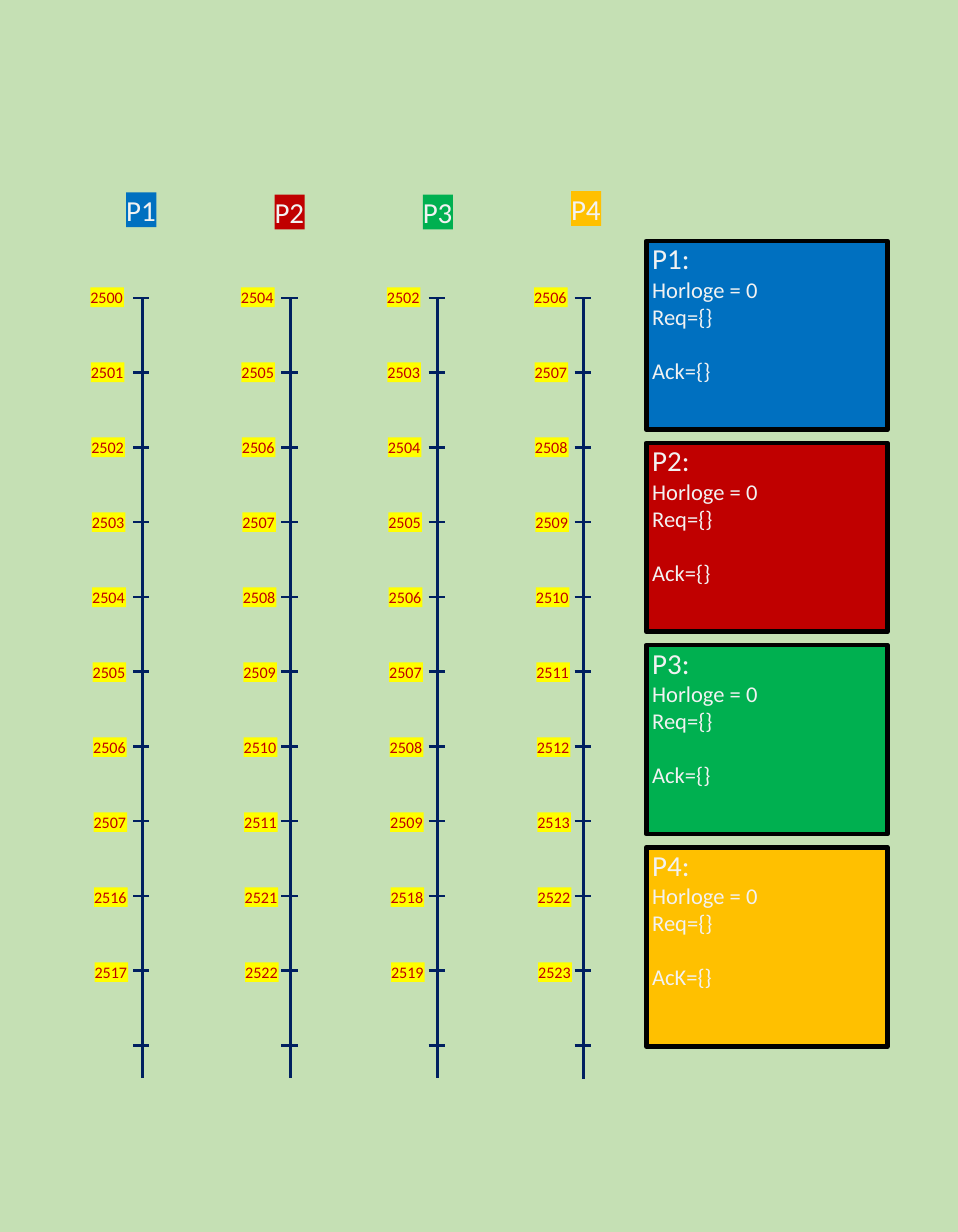
from dataclasses import dataclass

from lxml import etree
from pptx import Presentation
from pptx.dml.color import RGBColor as RGB
from pptx.enum.shapes import MSO_CONNECTOR as CONN, MSO_SHAPE as SHAPE
from pptx.enum.text import MSO_ANCHOR as ANCHOR, MSO_AUTO_SIZE as AUTO, PP_ALIGN as ALIGN
from pptx.oxml.ns import qn
from pptx.util import Inches, Pt


@dataclass(frozen=True)
class Theme:
    font: str = "Calibri"
    background: str = "C5E0B4"
    axis: str = "002060"
    clock_fill: str = "FFFF00"
    clock_text: str = "C00000"
    light_text: str = "F2F2F2"
    border: str = "000000"
    name_size: int = 18
    state_size: int = 14
    clock_size: int = 10


@dataclass(frozen=True)
class Process:
    name: str
    color: str
    axis_x: float
    axis_top: float
    clock_x: float
    tag_top: float
    first: int    # clock value at the first tick
    resumed: int  # clock value after the jump
    ack: str = "Ack"


THEME = Theme()
PROCESSES = [
    Process("P1", "0070C0", 1.23, 2.57, 0.78, 1.66, 2500, 2516),
    Process("P2", "C00000", 2.51, 2.57, 2.08, 1.68, 2504, 2521),
    Process("P3", "00B050", 3.78, 2.57, 3.34, 1.68, 2502, 2518),
    Process("P4", "FFC000", 5.04, 2.58, 4.61, 1.65, 2506, 2522, "AcK"),
]
AXIS_LENGTH = 6.73
TICKS, TICK_TOP, TICK_STEP, TICK_WIDTH = 11, 2.57, 0.645, 0.14
CLOCK_TOP, CLOCK_STEP, CLOCK_DRIFT = 2.48, 0.647, 0.004
TAG_LEFT, TAG_STEP = 1.09, 1.28
PANEL_LEFT, PANEL_TOP, PANEL_STEP = 5.58, 2.08, 1.743
PANEL_WIDTH, PANEL_HEIGHT, LAST_PANEL_HEIGHT = 2.08, 1.63, 1.72


def add_line(s, x1, y1, x2, y2, width):
    line = s.shapes.add_connector(CONN.STRAIGHT, *map(Inches, (x1, y1, x2, y2)))
    line.line.color.rgb = RGB.from_string(THEME.axis)
    line.line.width = Pt(width)
    etree.SubElement(line._element.spPr, qn("a:effectLst"))


def add_box(s, x, y, w, h, fill):
    sp = s.shapes.add_shape(SHAPE.RECTANGLE, *map(Inches, (x, y, w, h)))
    sp.shadow.inherit = False
    sp.fill.solid()
    sp.fill.fore_color.rgb = RGB.from_string(fill)
    sp.line.fill.background()
    tf = sp.text_frame
    tf.margin_left = tf.margin_right = tf.margin_top = tf.margin_bottom = 0
    tf.vertical_anchor = ANCHOR.TOP
    return sp


def add_run(p, text, size, color):
    p.alignment = ALIGN.LEFT
    r = p.add_run()
    r.text = text
    r.font.name = THEME.font
    r.font.size = Pt(size)
    r.font.color.rgb = RGB.from_string(color)


def add_label(s, x, y, w, h, fill, text, size, color):
    tf = add_box(s, x, y, w, h, fill).text_frame
    tf.word_wrap = False
    tf.auto_size = AUTO.SHAPE_TO_FIT_TEXT
    add_run(tf.paragraphs[0], text, size, color)


def add_timeline(s, process, tag_x):
    # Axis and its ticks
    x, top = process.axis_x, process.axis_top
    add_line(s, x, top, x, top + AXIS_LENGTH, 2)
    for i in range(TICKS):
        y = TICK_TOP + i * TICK_STEP
        left = x - 0.08
        add_line(s, left, y, left + TICK_WIDTH, y, 1.5)

    # Clock values: eight in a row, then two after the jump
    clocks = [process.first + i for i in range(8)] + [process.resumed, process.resumed + 1]
    for i, clock in enumerate(clocks):
        add_label(s, process.clock_x + i * CLOCK_DRIFT, CLOCK_TOP + i * CLOCK_STEP,
                  0.29, 0.17, THEME.clock_fill, str(clock),
                  THEME.clock_size, THEME.clock_text)

    # Process name above the axis
    add_label(s, tag_x, process.tag_top, 0.26, 0.3, process.color, process.name,
              THEME.name_size, THEME.light_text)


def add_panel(s, process, x, y, w, h):
    sp = add_box(s, x, y, w, h, process.color)
    sp.line.color.rgb = RGB.from_string(THEME.border)
    sp.line.width = Pt(3)
    tf = sp.text_frame
    tf.word_wrap = True
    tf.margin_left = Inches(0.05)
    add_run(tf.paragraphs[0], f"{process.name}:", THEME.name_size, THEME.light_text)
    for text in ("Horloge = 0", "Req={}", f"{process.ack}={{}}"):
        p = tf.add_paragraph()
        add_run(p, text, THEME.state_size, THEME.light_text)
    p.space_before = Pt(17)  # one line of room above the acknowledgements


def main():
    prs = Presentation()
    prs.slide_width, prs.slide_height = Inches(8.27), Inches(10.63)
    s = prs.slides.add_slide(prs.slide_layouts[6])
    s.background.fill.solid()
    s.background.fill.fore_color.rgb = RGB.from_string(THEME.background)

    for i, process in enumerate(PROCESSES):
        add_timeline(s, process, TAG_LEFT + i * TAG_STEP)
        height = LAST_PANEL_HEIGHT if process is PROCESSES[-1] else PANEL_HEIGHT
        add_panel(s, process, PANEL_LEFT, PANEL_TOP + i * PANEL_STEP, PANEL_WIDTH, height)

    prs.save("out.pptx")


if __name__ == "__main__":
    main()
